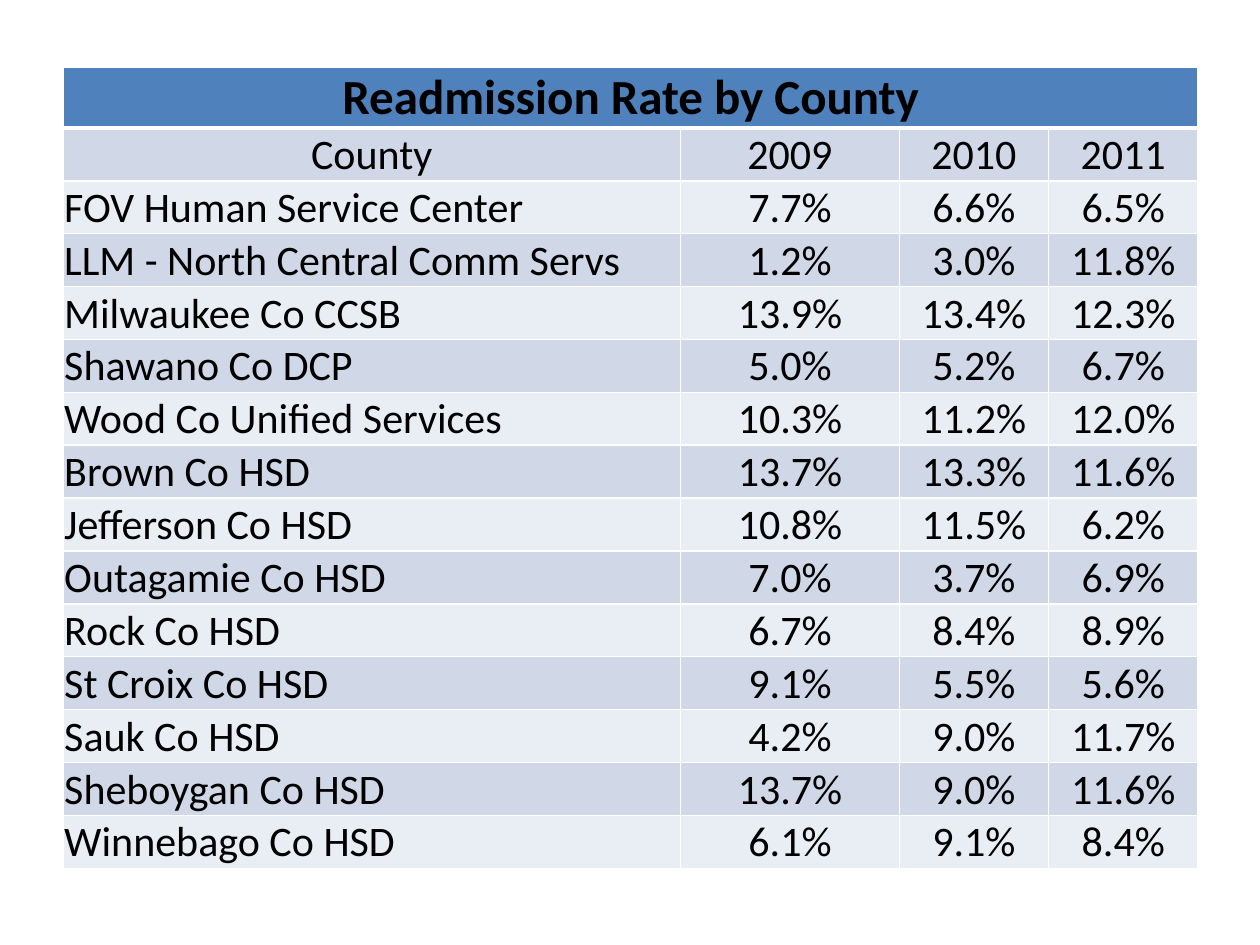
from dataclasses import dataclass

from lxml import etree
from pptx import Presentation, util as u
from pptx.dml.color import RGBColor
from pptx.enum import text
from pptx.oxml.ns import qn

TITLE = "Readmission Rate by County"
HEADINGS = ("County", "2009", "2010", "2011")
RATES = [
    ("FOV Human Service Center", "7.7%", "6.6%", "6.5%"),
    ("LLM - North Central Comm Servs", "1.2%", "3.0%", "11.8%"),
    ("Milwaukee Co CCSB", "13.9%", "13.4%", "12.3%"),
    ("Shawano Co DCP", "5.0%", "5.2%", "6.7%"),
    ("Wood Co Unified Services", "10.3%", "11.2%", "12.0%"),
    ("Brown Co HSD", "13.7%", "13.3%", "11.6%"),
    ("Jefferson Co HSD", "10.8%", "11.5%", "6.2%"),
    ("Outagamie Co HSD", "7.0%", "3.7%", "6.9%"),
    ("Rock Co HSD", "6.7%", "8.4%", "8.9%"),
    ("St Croix Co HSD", "9.1%", "5.5%", "5.6%"),
    ("Sauk Co HSD", "4.2%", "9.0%", "11.7%"),
    ("Sheboygan Co HSD", "13.7%", "9.0%", "11.6%"),
    ("Winnebago Co HSD", "6.1%", "9.1%", "8.4%"),
]

LEFT, TOP = 0.5, 0.53
COLUMN_WIDTHS = (4.9, 1.74, 1.18, 1.19)
ROW_HEIGHT = 0.42
CELL_MARGIN = 0.01


@dataclass(frozen=True)
class Theme:
    font: str = "Calibri"
    title_size: int = 28
    body_size: int = 24
    ink: str = "000000"
    title_fill: str = "4F81BD"
    bands: tuple = ("D0D8E8", "E9EDF4")
    border: str = "FFFFFF"
    thin: int = 1
    thick: int = 3


THEME = Theme()


def set_borders(cell, **widths):
    """Draw the four cell borders; widths in points override the thin default."""
    properties = cell._tc.get_or_add_tcPr()
    for index, side in enumerate("LRTB"):
        width = u.Pt(widths.get(side, THEME.thin))
        line = etree.Element(qn(f"a:ln{side}"), w=str(int(width)))
        fill = etree.SubElement(line, qn("a:solidFill"))
        etree.SubElement(fill, qn("a:srgbClr"), val=THEME.border)
        properties.insert(index, line)


def style_cell(cell, fill, **border_widths):
    cell.fill.solid()
    cell.fill.fore_color.rgb = RGBColor.from_string(fill)
    cell.vertical_anchor = text.MSO_ANCHOR.BOTTOM
    cell.margin_left = cell.margin_right = cell.margin_top = u.Inches(CELL_MARGIN)
    cell.margin_bottom = 0
    set_borders(cell, **border_widths)


def write(cell, words, size, bold=False, centred=True):
    paragraph = cell.text_frame.paragraphs[0]
    paragraph.alignment = text.PP_ALIGN.CENTER if centred else text.PP_ALIGN.LEFT
    run = paragraph.add_run()
    run.text = words
    run.font.name = THEME.font
    run.font.size = u.Pt(size)
    run.font.bold = bold
    run.font.color.rgb = RGBColor.from_string(THEME.ink)


def add_rate_table(slide):
    body = [HEADINGS, *RATES]
    row_count = len(body) + 1
    table = slide.shapes.add_table(
        row_count, len(HEADINGS), u.Inches(LEFT), u.Inches(TOP),
        u.Inches(sum(COLUMN_WIDTHS)), u.Inches(ROW_HEIGHT * row_count),
    ).table
    for column, width in zip(table.columns, COLUMN_WIDTHS):
        column.width = u.Inches(width)
    for row in table.rows:
        row.height = u.Inches(ROW_HEIGHT)

    for cell in table.rows[0].cells:
        style_cell(cell, THEME.title_fill, B=THEME.thick)
    title = table.cell(0, 0)
    title.merge(table.cell(0, len(HEADINGS) - 1))
    write(title, TITLE, THEME.title_size, bold=True)

    for row, values in enumerate(body, start=1):
        is_heading = row == 1
        for column, value in enumerate(values):
            cell = table.cell(row, column)
            style_cell(cell, THEME.bands[(row - 1) % 2],
                       T=THEME.thick if is_heading else THEME.thin)
            write(cell, value, THEME.body_size, centred=is_heading or column > 0)


def main():
    presentation = Presentation()
    presentation.slide_width = u.Inches(10)
    presentation.slide_height = u.Inches(7.5)
    slide = presentation.slides.add_slide(presentation.slide_layouts[6])
    add_rate_table(slide)
    presentation.save("out.pptx")


if __name__ == "__main__":
    main()
